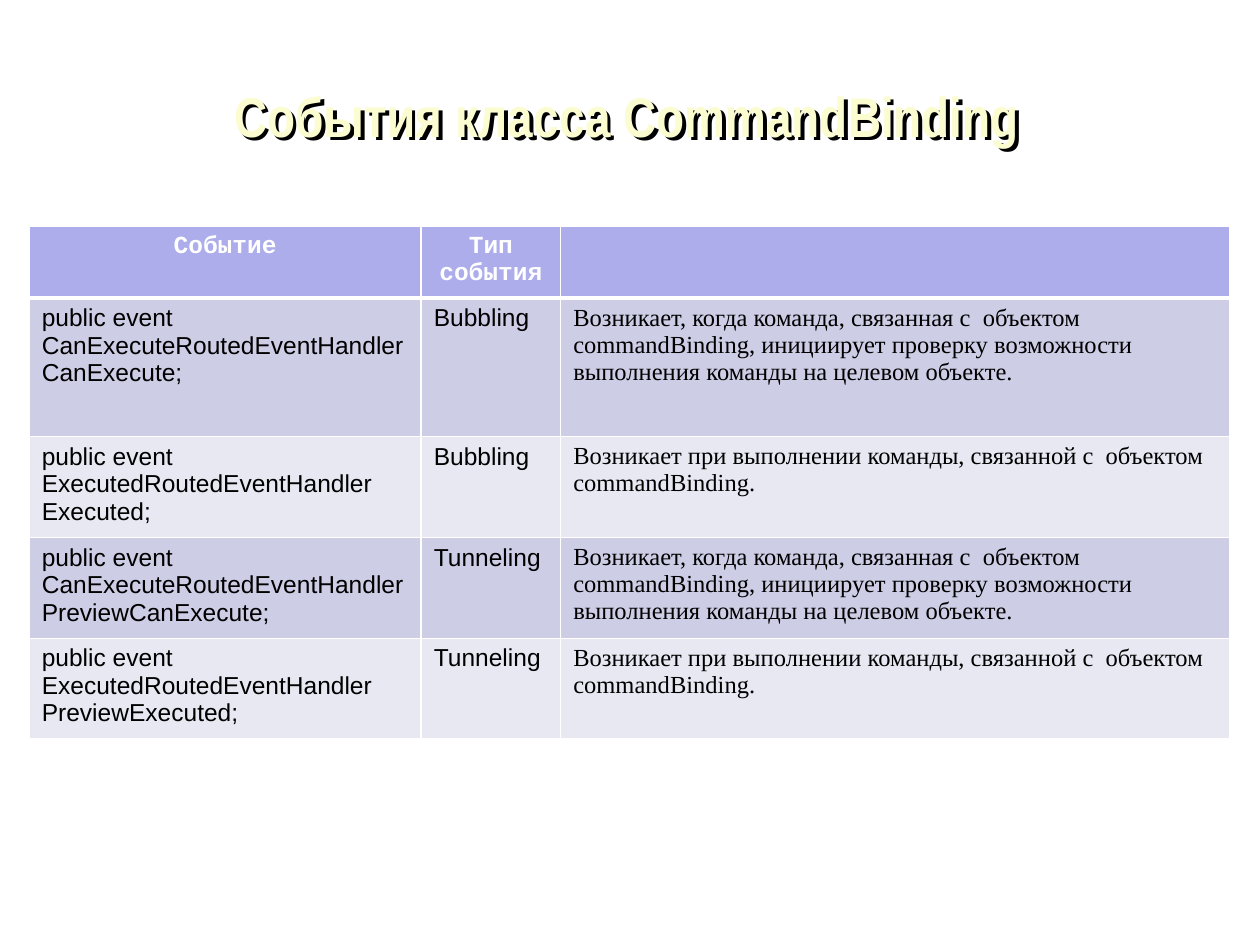
from lxml import etree
from pptx import Presentation
from pptx.dml.color import RGBColor
from pptx.enum.text import MSO_ANCHOR, PP_ALIGN
from pptx.oxml.ns import qn
from pptx.util import Pt

CENTER, LEFT = PP_ALIGN.CENTER, PP_ALIGN.LEFT
MIDDLE = MSO_ANCHOR.MIDDLE
WHITE = RGBColor(0xFF, 0xFF, 0xFF)
BLACK = RGBColor(0, 0, 0)
CREAM = RGBColor(0xFB, 0xFC, 0xD0)
HEADER = RGBColor(0xAD, 0xAD, 0xEB)
BANDS = [RGBColor(0xCD, 0xCD, 0xE6), RGBColor(0xE8, 0xE8, 0xF3)]

TITLE = "События класса CommandBinding"
CHECK = ("Возникает, когда команда, связанная с  объектом commandBinding, "
         "инициирует проверку возможности выполнения команды на целевом объекте.")
RUN = "Возникает при выполнении команды, связанной с  объектом commandBinding."
ROWS = [
    ("Событие", "Тип события", ""),
    ("public event CanExecuteRoutedEventHandler CanExecute;", "Bubbling", CHECK),
    ("public event ExecutedRoutedEventHandler Executed;", "Bubbling", RUN),
    ("public event CanExecuteRoutedEventHandler PreviewCanExecute;", "Tunneling", CHECK),
    ("public event ExecutedRoutedEventHandler PreviewExecuted;", "Tunneling", RUN),
]
COL_WIDTHS = [224, 79.7, 382.5]
ROW_HEIGHTS = [25.2, 79.2, 49.7, 49.7, 49.7]
TABLE_HEIGHT = 292.3
COL_FONTS = ["Arial", "Arial", "Times New Roman"]


def write(tf, text, font="Arial", size=14, color=BLACK, bold=False, align=LEFT):
    p = tf.paragraphs[0]
    p.alignment = align
    r = p.add_run()
    r.text = text
    r.font.name = font
    r.font.size = Pt(size)
    r.font.bold = bold
    r.font.color.rgb = color


def add_shadow(sp):
    effects = etree.SubElement(sp._element.spPr, qn("a:effectLst"))
    shadow = etree.SubElement(effects, qn("a:outerShdw"), dist=str(Pt(2.83)),
                              dir="2700000", algn="ctr", rotWithShape="0")
    etree.SubElement(shadow, qn("a:srgbClr"), val=str(BLACK))


def set_borders(cell, top, bottom):
    tcPr = cell._tc.get_or_add_tcPr()
    for side, width in (("L", 1), ("R", 1), ("T", top), ("B", bottom)):
        ln = etree.SubElement(tcPr, qn(f"a:ln{side}"), w=str(Pt(width)))
        fill = etree.SubElement(ln, qn("a:solidFill"))
        etree.SubElement(fill, qn("a:srgbClr"), val=str(WHITE))


prs = Presentation()
prs.slide_width, prs.slide_height = Pt(720), Pt(540)
s = prs.slides.add_slide(prs.slide_layouts[6])

sp = s.shapes.add_textbox(Pt(28.4), Pt(35.6), Pt(660), Pt(60))
add_shadow(sp)
tf = sp.text_frame
tf.word_wrap = True
tf.vertical_anchor = MIDDLE
write(tf, TITLE, font="Arial Narrow", size=32, color=CREAM, bold=True, align=CENTER)

frame = s.shapes.add_table(len(ROWS), len(COL_WIDTHS), Pt(16.7), Pt(129.4),
                           Pt(sum(COL_WIDTHS)), Pt(TABLE_HEIGHT))
table = frame.table
for col, width in zip(table.columns, COL_WIDTHS):
    col.width = Pt(width)
for row, height in zip(table.rows, ROW_HEIGHTS):
    row.height = Pt(height)
frame.height = Pt(TABLE_HEIGHT)

for i, texts in enumerate(ROWS):
    for j, text in enumerate(texts):
        cell = table.cell(i, j)
        set_borders(cell, top=3 if i == 1 else 1, bottom=3 if i == 0 else 1)
        cell.fill.solid()
        cell.fill.fore_color.rgb = BANDS[(i - 1) % 2] if i else HEADER
        if not text:
            continue
        if i == 0:
            write(cell.text_frame, text, font="Courier New", color=WHITE,
                  bold=True, align=CENTER)
        else:
            write(cell.text_frame, text, font=COL_FONTS[j])

prs.save("out.pptx")
